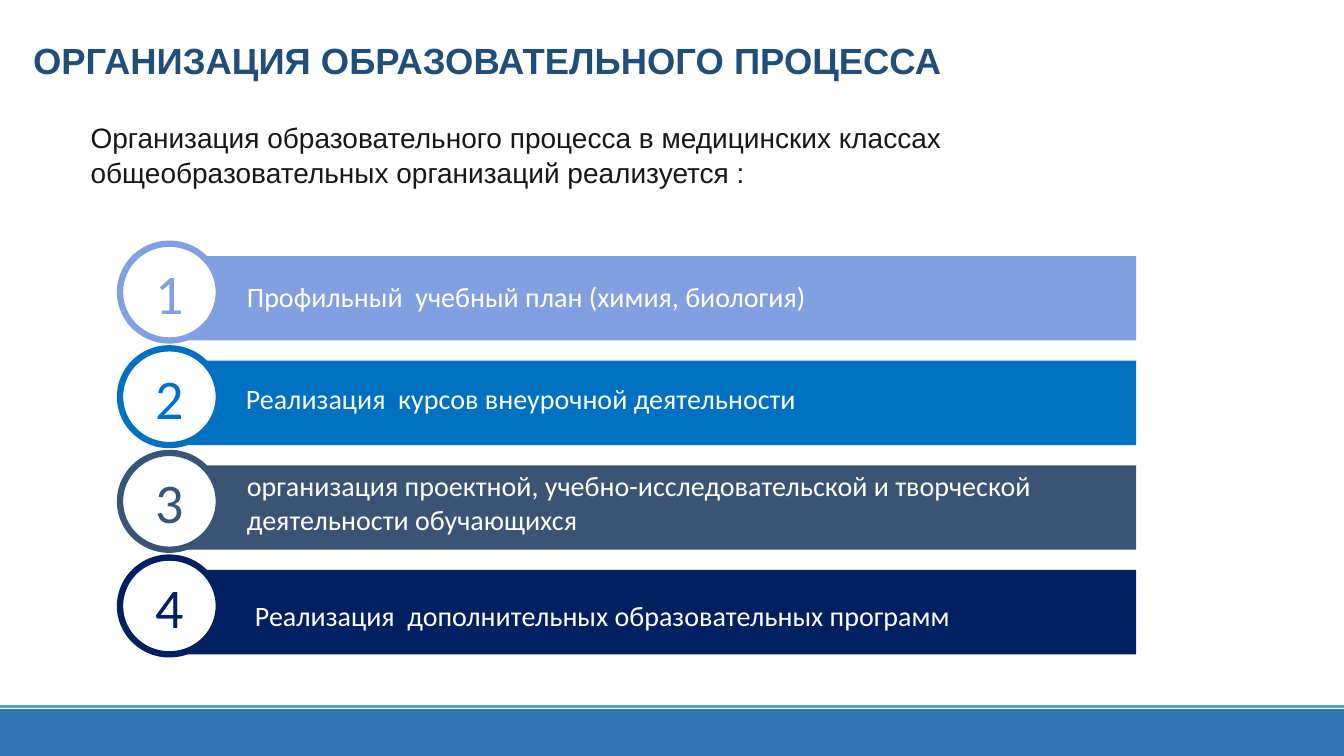
from dataclasses import dataclass
from typing import Optional

from lxml.etree import SubElement
from pptx import Presentation
from pptx.dml.color import RGBColor as Rgb
from pptx.enum.shapes import MSO_CONNECTOR as Link, MSO_SHAPE as Kind
from pptx.enum.text import MSO_ANCHOR as Anchor, MSO_AUTO_SIZE as Fit, PP_ALIGN as Align
from pptx.oxml.ns import qn
from pptx.util import Inches, Pt

WIDE, HIGH = Inches(13.333), Inches(7.5)


@dataclass(frozen=True)
class Theme:
    white: str = "FFFFFF"
    title: str = "1F4E79"
    intro: str = "181717"
    band: str = "2E75B6"
    rule: str = "5B9BD5"
    head: str = "Arial"
    body: str = "Calibri"
    big: int = 26
    text: int = 20
    digit: int = 40
    ring: float = 4.5


@dataclass(frozen=True)
class Box:
    """Left, top, width and height in percent of the slide's size."""
    x: float
    y: float
    w: float
    h: float

    def place(self) -> tuple[int, int, int, int]:
        return (int(WIDE * self.x / 100), int(HIGH * self.y / 100),
                int(WIDE * self.w / 100), int(HIGH * self.h / 100))


@dataclass(frozen=True)
class Step:
    text: str
    color: str
    left: float
    drop: float
    width: float = 68.33


THEME = Theme()
TOP, PITCH = 33.87, 13.84
STEPS = (
    Step("Профильный  учебный план (химия, биология)", "81A0DF", 17.63, 2.93),
    Step("Реализация  курсов внеурочной деятельности", "0070C0", 17.55, 2.69),
    Step("организация проектной, учебно-исследовательской и творческой "
         "деятельности обучающихся", "395474", 17.63, 2.58, 65.78),
    Step("Реализация  дополнительных образовательных программ", "002060", 18.23, 3.68),
)


def style(para, font: str, size: int, color: str, bold: bool = False) -> None:
    para.font.name, para.font.size, para.font.bold = font, Pt(size), bold
    para.font.color.rgb = Rgb.from_string(color)


def shape(slide, kind: Kind, box: Box, fill: str,
          edge: Optional[str] = None, width: float = 1):
    item = slide.shapes.add_shape(kind, *box.place())
    item.shadow.inherit = False
    item.fill.solid()
    item.fill.fore_color.rgb = Rgb.from_string(fill)
    if edge:
        item.line.color.rgb = Rgb.from_string(edge)
        item.line.width = Pt(width)
    else:
        item.line.fill.background()
    return item


def write(slide, box: Box, text: str, font: str, size: int, color: str,
          bold: bool = False):
    frame = slide.shapes.add_textbox(*box.place()).text_frame
    frame.word_wrap = True
    frame.text = text
    style(frame.paragraphs[0], font, size, color, bold)
    return frame


def head(slide, box: Box, text: str, size: int, color: str, bold: bool = False) -> None:
    frame = write(slide, box, text, THEME.head, size, color, bold)
    frame.auto_size = Fit.SHAPE_TO_FIT_TEXT
    frame.paragraphs[0].line_spacing = 1.05


def foot(slide) -> None:
    y = int(HIGH * 0.9347)
    rule = slide.shapes.add_connector(Link.STRAIGHT, 0, y, WIDE, y)
    rule.line.color.rgb = Rgb.from_string(THEME.rule)
    rule.line.width = Pt(2.25)
    SubElement(rule._element.spPr, qn("a:effectLst"))
    shape(slide, Kind.RECTANGLE, Box(0, 93.87, 100, 6.13), THEME.band, THEME.band)


def draw(slide, rank: int, step: Step) -> None:
    """Draw one bar with its numbered ring and label."""
    top = TOP + rank * PITCH
    shape(slide, Kind.RECTANGLE, Box(12, top, 72.53, 11.17), step.color)
    ring = shape(slide, Kind.OVAL, Box(8.93, top - 1.63, 7.35, 12.8),
                 THEME.white, step.color, THEME.ring)
    frame = ring.text_frame
    frame.margin_left = frame.margin_right = frame.margin_top = frame.margin_bottom = 0
    frame.vertical_anchor = Anchor.MIDDLE
    frame.text = str(rank + 1)
    frame.paragraphs[0].alignment = Align.CENTER
    style(frame.paragraphs[0], THEME.body, THEME.digit, step.color)
    label = write(slide, Box(step.left, top + step.drop, step.width, 4.67),
                  step.text, THEME.body, THEME.text, THEME.white)
    label.vertical_anchor = Anchor.MIDDLE


def main() -> None:
    deck = Presentation()
    deck.slide_width, deck.slide_height = WIDE, HIGH
    slide = deck.slides.add_slide(deck.slide_layouts[6])
    foot(slide)
    head(slide, Box(1.73, 4.13, 80.4, 7.2), "ОРГАНИЗАЦИЯ ОБРАЗОВАТЕЛЬНОГО ПРОЦЕССА",
         THEME.big, THEME.title, True)
    head(slide, Box(6, 15.07, 80.4, 10.27),
         "Организация образовательного процесса в медицинских классах "
         "общеобразовательных организаций реализуется :", THEME.text, THEME.intro)
    for rank, step in enumerate(STEPS):
        draw(slide, rank, step)
    deck.save("out.pptx")


if __name__ == "__main__":
    main()
